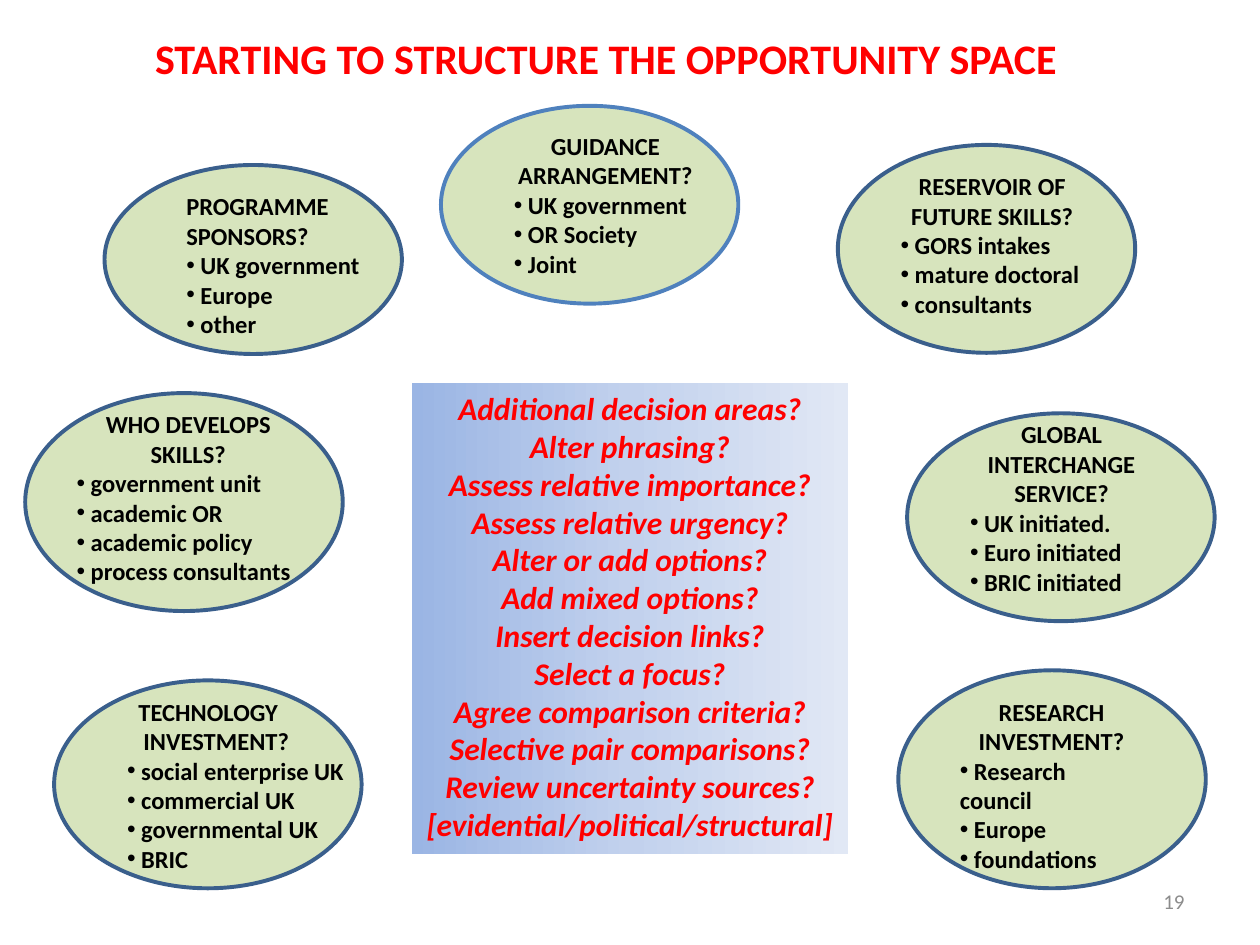
from copy import deepcopy
from dataclasses import dataclass

from lxml import etree
from pptx import Presentation
from pptx.dml.color import RGBColor
from pptx.enum.shapes import MSO_SHAPE
from pptx.enum.text import MSO_ANCHOR, MSO_AUTO_SIZE, PP_ALIGN
from pptx.oxml.ns import qn
from pptx.util import Inches, Pt

OVAL, RECTANGLE = MSO_SHAPE.OVAL, MSO_SHAPE.RECTANGLE
LEFT, CENTER, RIGHT = PP_ALIGN.LEFT, PP_ALIGN.CENTER, PP_ALIGN.RIGHT
TOP, MIDDLE = MSO_ANCHOR.TOP, MSO_ANCHOR.MIDDLE
GROW, FIXED = MSO_AUTO_SIZE.SHAPE_TO_FIT_TEXT, MSO_AUTO_SIZE.NONE
TITLE_ONLY = 5
COLUMNS, ROWS = 100, 75


@dataclass(frozen=True)
class Theme:
    font: str = "Calibri"
    bullet_font: str = "Arial"
    accent: str = "FF0000"
    ink: str = "000000"
    muted: str = "8C8C8C"
    oval_fill: str = "D7E4BD"
    oval_line: str = "3A5F8C"
    highlight_line: str = "4F81BD"
    gradient: tuple = ((0, "9AB5E4"), (0.5, "C2D1ED"), (1, "E1E8F5"))
    title_size: int = 24
    prompt_size: int = 18
    body_size: int = 14
    number_size: int = 12
    line_width: float = 2.25


class SlideBuilder:
    """Places elements by (column, row, columns wide, rows high)."""

    def __init__(self, deck, theme):
        self.theme = theme
        self.cell = (deck.slide_width / COLUMNS, deck.slide_height / ROWS)
        self.slide = deck.slides.add_slide(deck.slide_layouts[TITLE_ONLY])

    def box(self, area):
        return [round(n * self.cell[i % 2]) for i, n in enumerate(area)]

    def format_frame(self, frame, fit=GROW, anchor=TOP):
        settings = {"word_wrap": True, "auto_size": fit, "vertical_anchor": anchor}
        for name, value in settings.items():
            setattr(frame, name, value)

    def add_line(self, paragraph, text, align, **font):
        paragraph.alignment = align
        run = paragraph.add_run()
        run.text = text
        color = font.pop("color")
        for name, value in {"name": self.theme.font, **font}.items():
            setattr(run.font, name, value)
        run.font.color.rgb = RGBColor.from_string(color)

    def add_lines(self, frame, lines, align, **font):
        for i, line in enumerate(lines):
            paragraph = frame.add_paragraph() if i else frame.paragraphs[0]
            self.add_line(paragraph, line, align, **font)

    def title(self, area, text):
        heading = self.slide.shapes.title
        heading.left, heading.top, heading.width, heading.height = self.box(area)
        self.format_frame(heading.text_frame, FIXED, MIDDLE)
        self.add_lines(heading.text_frame, [text], CENTER, bold=True,
                       size=Pt(self.theme.title_size), color=self.theme.accent)

    def oval(self, area, line_color):
        oval = self.slide.shapes.add_shape(OVAL, *self.box(area))
        oval.shadow.inherit = False
        oval.fill.solid()
        oval.fill.fore_color.rgb = RGBColor.from_string(self.theme.oval_fill)
        oval.line.color.rgb = RGBColor.from_string(line_color)
        oval.line.width = Pt(self.theme.line_width)

    def decision_area(self, area, heading, options, align=CENTER, indents=(0, 0)):
        frame = self.slide.shapes.add_textbox(*self.box(area)).text_frame
        self.format_frame(frame)
        font = dict(size=Pt(self.theme.body_size), bold=True, color=self.theme.ink)
        self.add_lines(frame, heading, align, **font)
        for paragraph, indent in zip(frame.paragraphs, indents):
            paragraph._p.get_or_add_pPr().set("marL", str(Inches(indent)))
        for option in options:
            paragraph = frame.add_paragraph()
            self.add_line(paragraph, " " + option, LEFT, **font)
            properties = paragraph._p.get_or_add_pPr()
            etree.SubElement(properties, qn("a:buFont"), typeface=self.theme.bullet_font)
            etree.SubElement(properties, qn("a:buChar"), char="•")

    def prompt_panel(self, area, prompts):
        panel = self.slide.shapes.add_shape(RECTANGLE, *self.box(area))
        panel.shadow.inherit = False
        panel.line.fill.background()
        panel.fill.gradient()
        panel.fill.gradient_angle = 0
        stop_list = panel._element.spPr.find(f".//{qn('a:gsLst')}")
        stop_list.insert(1, deepcopy(stop_list[0]))
        for stop, (position, color) in zip(panel.fill.gradient_stops, self.theme.gradient):
            stop.position = position
            stop.color.rgb = RGBColor.from_string(color)
        self.format_frame(panel.text_frame)
        self.add_lines(panel.text_frame, prompts, CENTER, bold=True, italic=True,
                       size=Pt(self.theme.prompt_size), color=self.theme.accent)

    def page_number(self, area, number):
        frame = self.slide.shapes.add_textbox(*self.box(area)).text_frame
        self.format_frame(frame, FIXED, MIDDLE)
        self.add_lines(frame, [number], RIGHT, size=Pt(self.theme.number_size),
                       color=self.theme.muted)


THEME = Theme()

# oval area, text area, heading lines, options, extra formatting
DECISION_AREAS = [
    ((4.3, 54, 24.4, 16.5), (9.1, 54.8, 20.5, 15.1), ["TECHNOLOGY", "INVESTMENT?"],
     ["social enterprise UK", "commercial UK", "governmental UK", "BRIC"],
     {"align": LEFT, "indents": (0.09, 0.13)}),
    ((2, 31.2, 25.2, 17.3), (5.1, 32, 19.7, 17.2), ["WHO DEVELOPS SKILLS?"],
     ["government unit", "academic OR", "academic policy", "process consultants"], {}),
    ((8.3, 13.1, 23.6, 15), (13.8, 14.7, 16.5, 15.1), ["PROGRAMME", "SPONSORS?"],
     ["UK government", "Europe", "other"], {"align": LEFT}),
    ((71.3, 53.2, 24.4, 17.3), (75.2, 54.8, 16.5, 12.8), ["RESEARCH INVESTMENT?"],
     ["Research council", "Europe", "foundations"], {}),
    ((35, 8.4, 23.6, 15.7), (39.8, 9.9, 16.5, 12.8), ["GUIDANCE", "ARRANGEMENT?"],
     ["UK government", "OR Society", "Joint"], {}),
    ((66.5, 11.5, 23.6, 16.5), (70.5, 13.1, 16.5, 14.8), ["RESERVOIR OF FUTURE SKILLS?"],
     ["GORS intakes", "mature doctoral", "consultants"], {}),
    ((72, 32.8, 24.4, 16.5), (76, 32.8, 16.5, 17.2), ["GLOBAL", "INTERCHANGE SERVICE?"],
     ["UK initiated.", "Euro initiated", "BRIC initiated"], {}),
]

PROMPTS = [
    "Additional decision areas?",
    "Alter phrasing?",
    "Assess relative importance?",
    "Assess relative urgency?",
    "Alter or add options?",
    "Add mixed options?",
    "Insert decision links?",
    "Select a focus?",
    "Agree comparison criteria?",
    "Selective pair comparisons?",
    "Review uncertainty sources? [evidential/political/structural]",
]


def main():
    deck = Presentation()
    deck.slide_width, deck.slide_height = Inches(10), Inches(7.5)
    builder = SlideBuilder(deck, THEME)
    builder.title((9.1, 2.1, 78, 5), "STARTING TO STRUCTURE THE OPPORTUNITY SPACE")
    for oval_area, text_area, heading, options, extra in DECISION_AREAS:
        highlighted = heading[0] == "GUIDANCE"
        builder.oval(oval_area, THEME.highlight_line if highlighted else THEME.oval_line)
        builder.decision_area(text_area, heading, options, **extra)
    builder.prompt_panel((32.7, 30.4, 34.6, 37.4), PROMPTS)
    builder.page_number((71.7, 69.5, 23.3, 4), "19")
    deck.save("out.pptx")


if __name__ == "__main__":
    main()
